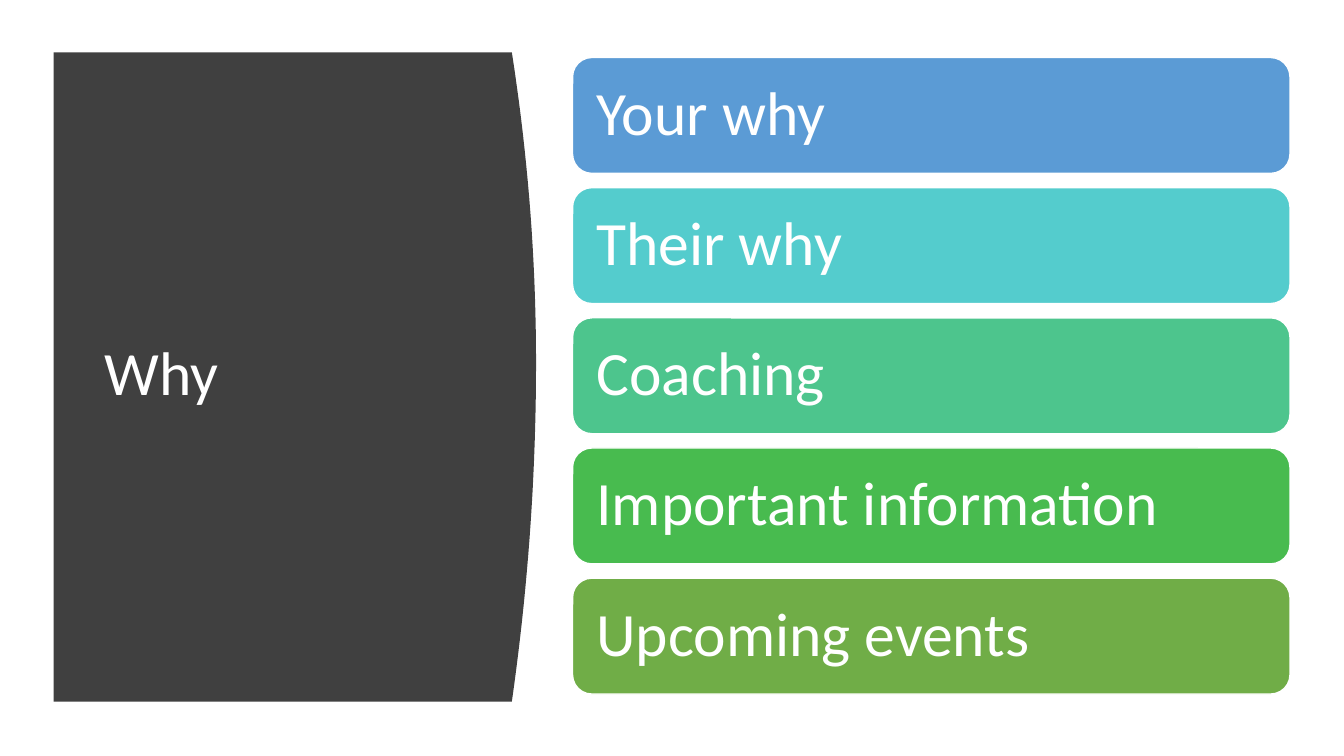
from dataclasses import dataclass

from pptx import Presentation
from pptx import util as u
from pptx.dml.color import RGBColor
from pptx.enum import shapes, text

WHITE = RGBColor(0xFF, 0xFF, 0xFF)
CHARCOAL = RGBColor(0x40, 0x40, 0x40)
BLUE = RGBColor(0x5B, 0x9B, 0xD5)
TURQUOISE = RGBColor(0x54, 0xCC, 0xCD)
MINT = RGBColor(0x4D, 0xC5, 0x8D)
GREEN = RGBColor(0x48, 0xBB, 0x4F)
OLIVE = RGBColor(0x70, 0xAD, 0x47)

# Panel outline, in cm: the right edge bulges out to PANEL_BULGE at BULGE_Y
PANEL_LEFT, PANEL_TOP, PANEL_BOTTOM = 1.35, 1.32, 17.68
PANEL_EDGE, PANEL_BULGE, BULGE_Y = 12.9, 13.51, 9.14
CURVE_STEPS = 40

# Bar column, in cm
BAR_LEFT, BAR_TOP, BAR_WIDTH, BAR_HEIGHT = 14.43, 1.45, 18.08, 2.92
BAR_PITCH = 3.28


@dataclass
class Bar:
    label: str
    color: RGBColor


BARS = [
    Bar("Your why", BLUE),
    Bar("Their why", TURQUOISE),
    Bar("Coaching", MINT),
    Bar("Important information", GREEN),
    Bar("Upcoming events", OLIVE),
]


def set_text(sp, label: str, inset: float) -> None:
    tf = sp.text_frame
    tf.word_wrap = True
    tf.vertical_anchor = text.MSO_ANCHOR.MIDDLE
    tf.margin_left = tf.margin_right = u.Cm(inset)
    p = tf.paragraphs[0]
    p.text = label
    p.alignment = text.PP_ALIGN.LEFT
    p.line_spacing = 0.9
    p.font.name = "Calibri"
    p.font.size = u.Pt(44)
    p.font.color.rgb = WHITE


def edge_point(step: int) -> tuple[int, int]:
    y = PANEL_TOP + (PANEL_BOTTOM - PANEL_TOP) * step / CURVE_STEPS
    end = PANEL_TOP if y < BULGE_Y else PANEL_BOTTOM
    distance = (y - BULGE_Y) / (end - BULGE_Y)
    x = PANEL_BULGE - (PANEL_BULGE - PANEL_EDGE) * distance ** 2
    return u.Cm(x), u.Cm(y)


def add_panel(s) -> None:
    left = u.Cm(PANEL_LEFT)
    builder = s.shapes.build_freeform(left, u.Cm(PANEL_TOP))
    curve = [edge_point(step) for step in range(CURVE_STEPS + 1)]
    builder.add_line_segments(curve + [(left, u.Cm(PANEL_BOTTOM))], close=True)
    sp = builder.convert_to_shape()
    sp.shadow.inherit = False
    sp.fill.solid()
    sp.fill.fore_color.rgb = CHARCOAL
    sp.line.fill.background()


def add_bar(s, bar: Bar, row: int) -> None:
    sp = s.shapes.add_shape(
        shapes.MSO_SHAPE.ROUNDED_RECTANGLE,
        u.Cm(BAR_LEFT), u.Cm(BAR_TOP + row * BAR_PITCH),
        u.Cm(BAR_WIDTH), u.Cm(BAR_HEIGHT),
    )
    sp.shadow.inherit = False
    sp.fill.solid()
    sp.fill.fore_color.rgb = bar.color
    sp.line.color.rgb = WHITE
    sp.line.width = u.Pt(1)
    # A rounded rectangle already insets its text by its corners
    set_text(sp, bar.label, 0.46)


def main() -> None:
    prs = Presentation()
    prs.slide_width, prs.slide_height = u.Cm(33.87), u.Cm(19.05)
    s = prs.slides.add_slide(prs.slide_layouts[6])

    # Title panel
    add_panel(s)
    title = s.shapes.add_textbox(u.Cm(2.39), u.Cm(2.82), u.Cm(9.5), u.Cm(13.31))
    set_text(title, "Why", 0.25)

    # Topic bars
    for row, bar in enumerate(BARS):
        add_bar(s, bar, row)

    prs.save("out.pptx")


if __name__ == "__main__":
    main()
